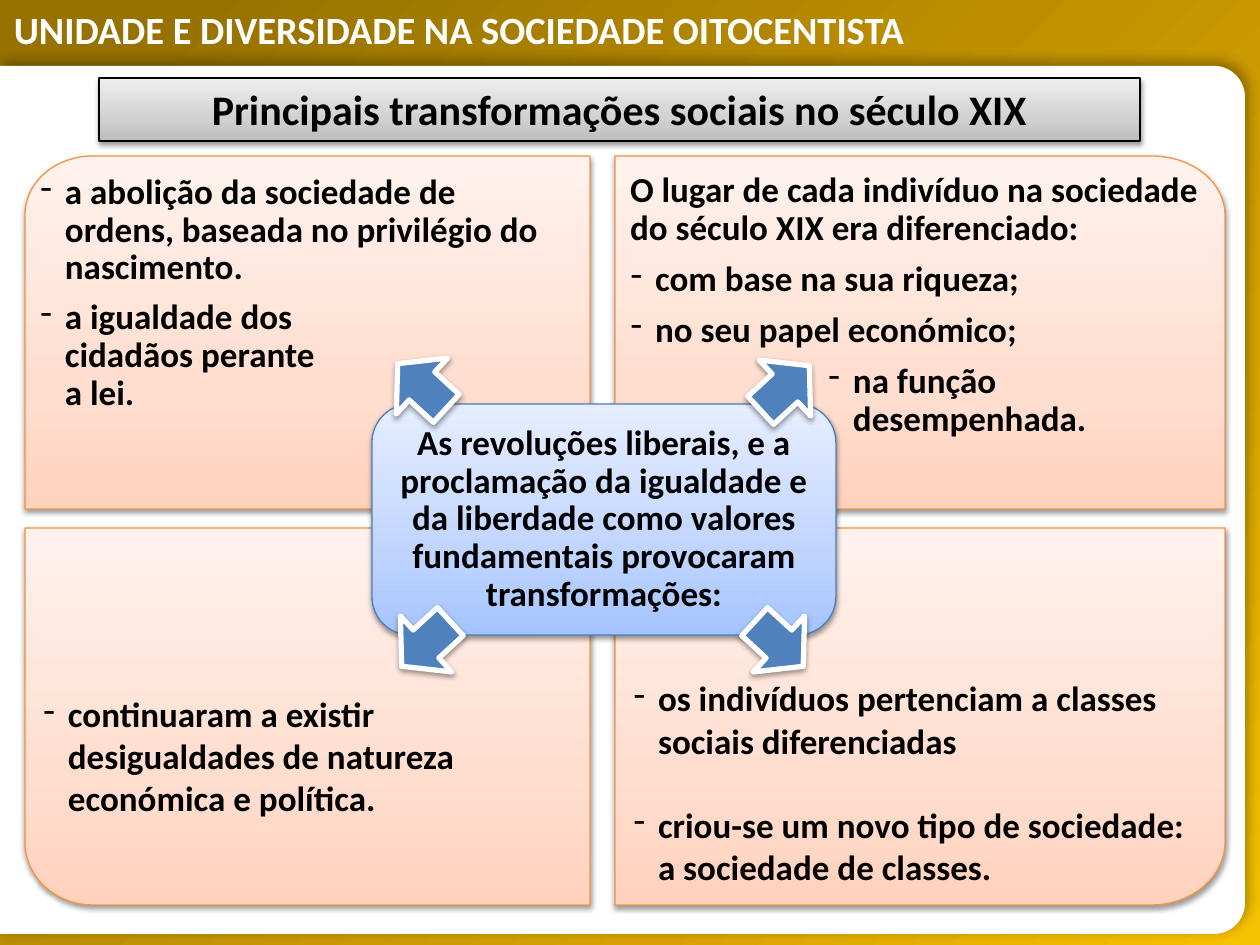
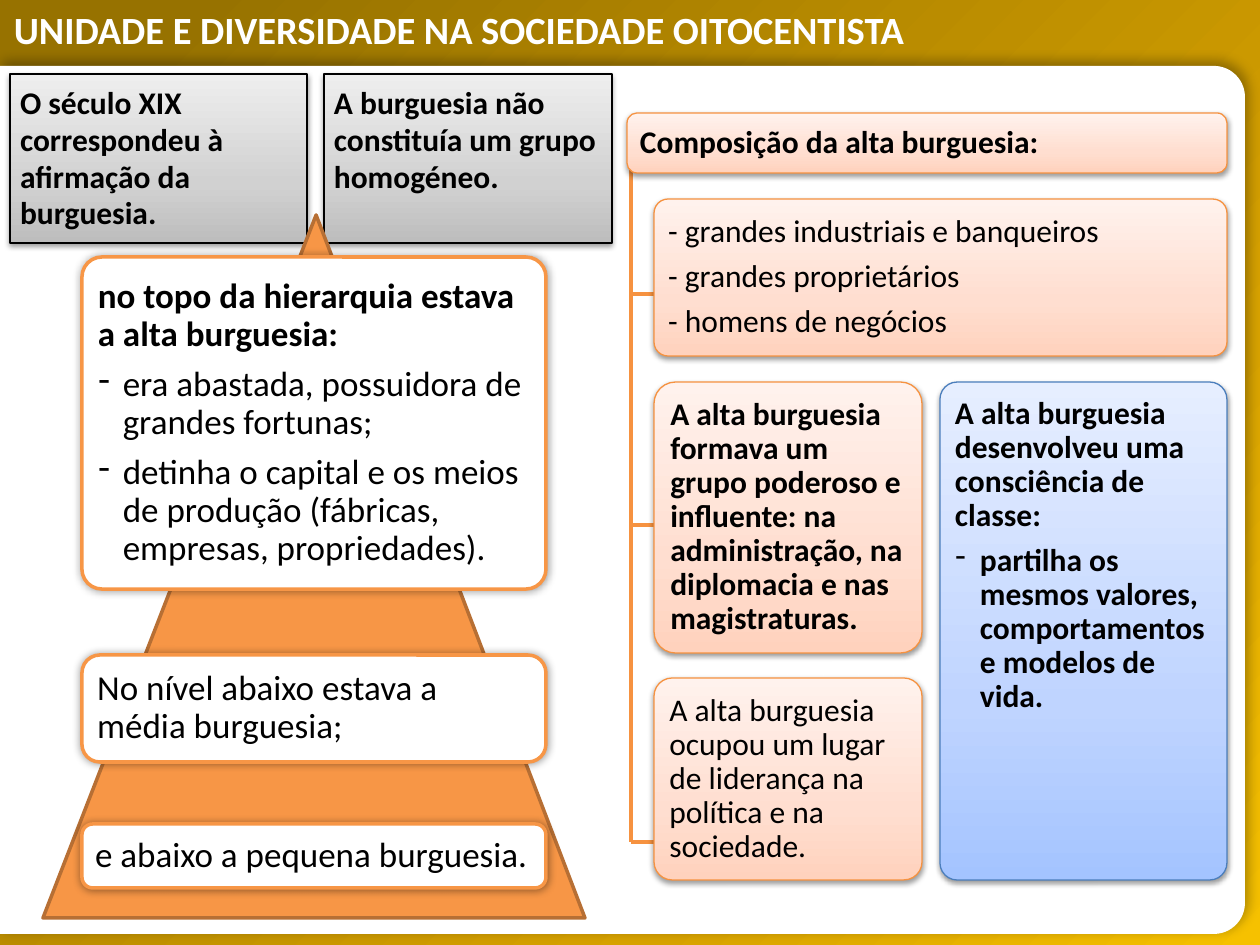
from dataclasses import dataclass
from math import cos, radians, sin

from lxml import etree
from pptx import Presentation
from pptx.dml.color import RGBColor
from pptx.enum.shapes import MSO_CONNECTOR, MSO_SHAPE
from pptx.enum.text import MSO_ANCHOR, PP_ALIGN
from pptx.oxml.ns import qn
from pptx.util import Pt

EMU_PER_PX = 914400 / 126
WIDTH, HEIGHT = 1260, 945
FONT = "Calibri"
HEADING = "UNIDADE E DIVERSIDADE NA SOCIEDADE OITOCENTISTA"

RECTANGLE = MSO_SHAPE.RECTANGLE
ROUNDED = MSO_SHAPE.ROUNDED_RECTANGLE
TRIANGLE = MSO_SHAPE.ISOSCELES_TRIANGLE
DOWN_ARROW = MSO_SHAPE.DOWN_ARROW
STRAIGHT = MSO_CONNECTOR.STRAIGHT
LEFT, CENTER = PP_ALIGN.LEFT, PP_ALIGN.CENTER
TOP, MIDDLE, BOTTOM = MSO_ANCHOR.TOP, MSO_ANCHOR.MIDDLE, MSO_ANCHOR.BOTTOM

BLACK, WHITE, ORANGE = "000000", "FFFFFF", "F79646"
ORANGE_LINE = "F69240"


@dataclass(frozen=True)
class Box:
    left: int
    top: int
    width: int
    height: int


@dataclass(frozen=True)
class Shadow:
    opacity: int
    blur: float
    distance: float
    direction: int


@dataclass(frozen=True)
class Look:
    """Fill is one colour or (position, colour) stops running at an angle."""
    fill: str | tuple
    line: str | None = None
    line_width: float = 0.75
    shadow: Shadow | None = None
    angle: int = 90


@dataclass(frozen=True)
class Line:
    text: str
    bold: bool = True
    bullet: bool = False
    indent: int = 25
    space_after: float | None = None


@dataclass(frozen=True)
class Panel:
    box: Box
    corner: str
    lines: list
    insets: tuple
    spacing: float | Pt = 0.9
    anchor: MSO_ANCHOR = TOP


@dataclass(frozen=True)
class Card:
    box: Box
    look: Look
    lines: list
    rounding: float = 0.1667
    size: int = 18
    anchor: MSO_ANCHOR = MIDDLE


DROP = Shadow(38, 3.1, 1.6, 90)
GOLD = Look(((9, "977200"), (72, "D7A200"), (100, "F6C100")), angle=-45)
PAGE = Look(WHITE, shadow=Shadow(30, 7, 3, 315))
GREY = Look(((0, "BDBDBD"), (35, "D1D1D1"), (100, "EEEEEE")), BLACK, shadow=DROP)
PEACH = Look(((0, "FFD2BD"), (35, "FFDED0"), (100, "FFF2ED")), ORANGE_LINE, shadow=DROP)
BLUE = Look(((0, "A4C4FF"), (35, "BFD4FF"), (100, "E6EEFF")), "4B7EBC", shadow=DROP)
ARROW = Look("4F81BD", WHITE, 3, DROP)
PYRAMID = Look(ORANGE, "B76F34", 2)
TIER = Look(WHITE, ORANGE, 2, Shadow(40, 5, 0, 0))


def px(value: float) -> int:
    return round(value * EMU_PER_PX)


def color(value: str) -> RGBColor:
    return RGBColor.from_string(value)


def placed(box: Box) -> tuple:
    return px(box.left), px(box.top), px(box.width), px(box.height)


def add_node(parent, tag: str, **attributes):
    return etree.SubElement(parent, qn(tag), {k: str(v) for k, v in attributes.items()})


def apply_look(shape, look: Look) -> None:
    if isinstance(look.fill, str):
        shape.fill.solid()
        shape.fill.fore_color.rgb = color(look.fill)
    else:
        shape.fill.gradient()
        shape.fill.gradient_angle = look.angle % 360
        stops = shape.element.spPr.find(qn("a:gradFill")).find(qn("a:gsLst"))
        for stop in list(stops):
            stops.remove(stop)
        for position, value in look.fill:
            add_node(add_node(stops, "a:gs", pos=position * 1000), "a:srgbClr", val=value)
    if look.line:
        shape.line.color.rgb = color(look.line)
        shape.line.width = Pt(look.line_width)
    else:
        shape.line.fill.background()
    shape.shadow.inherit = False
    if look.shadow:
        shadow = look.shadow
        effects = shape.element.spPr.find(qn("a:effectLst"))
        outer = add_node(effects, "a:outerShdw", blurRad=Pt(shadow.blur), dist=Pt(shadow.distance),
                         dir=shadow.direction * 60000, algn="ctr", rotWithShape=0)
        add_node(add_node(outer, "a:srgbClr", val=BLACK), "a:alpha", val=shadow.opacity * 1000)


def write_text(shape, lines: list, *, size: int = 20, text_color: str = BLACK, align=LEFT,
               anchor=TOP, insets: tuple = (10, 10, 10, 10), spacing: float | Pt = 0.9) -> None:
    frame = shape.text_frame
    frame.word_wrap = True
    frame.vertical_anchor = anchor
    frame.margin_left, frame.margin_top, frame.margin_right, frame.margin_bottom = map(px, insets)
    for index, line in enumerate(lines):
        paragraph = frame.add_paragraph() if index else frame.paragraphs[0]
        paragraph.text = line.text
        paragraph.alignment = align
        paragraph.line_spacing = spacing
        after = 0.35 * size if line.space_after is None else line.space_after
        paragraph.space_after = Pt(after)
        for run in paragraph.runs:
            run.font.name = FONT
            run.font.size = Pt(size)
            run.font.bold = line.bold
            run.font.color.rgb = color(text_color)
        if line.bullet:
            properties = paragraph._p.get_or_add_pPr()
            properties.set("marL", str(px(line.indent)))
            properties.set("indent", str(px(-25)))
            add_node(properties, "a:buChar", char="‐")


def add_preset(slide, kind, box: Box, look: Look, adjustment: float | None = None):
    shape = slide.shapes.add_shape(kind, *placed(box))
    if adjustment is not None:
        shape.adjustments[0] = adjustment
    apply_look(shape, look)
    return shape


def add_rounded_outline(slide, box: Box, corners: str, radius_x: float, radius_y: float, look: Look):
    """Rectangle whose named corners (of "nw ne se sw") are elliptical."""
    points = []
    for index, corner in enumerate(("nw", "ne", "se", "sw")):
        right, lower = "e" in corner, "s" in corner
        x, y = box.left + right * box.width, box.top + lower * box.height
        if corner not in corners.split():
            points.append((px(x), px(y)))
            continue
        center_x = x - radius_x if right else x + radius_x
        center_y = y - radius_y if lower else y + radius_y
        for step in range(19):
            turn = radians(180 + 90 * index + 5 * step)
            points.append((px(center_x + radius_x * cos(turn)), px(center_y + radius_y * sin(turn))))
    builder = slide.shapes.build_freeform(*points[0])
    builder.add_line_segments(points[1:], close=True)
    shape = builder.convert_to_shape()
    apply_look(shape, look)
    return shape


def add_line(slide, start: tuple, end: tuple) -> None:
    connector = slide.shapes.add_connector(STRAIGHT, *map(px, start + end))
    connector.line.color.rgb = color(ORANGE_LINE)
    connector.line.width = Pt(2.25)
    add_node(connector.element.spPr, "a:effectLst")


def add_card(slide, card: Card) -> None:
    shape = add_preset(slide, ROUNDED, card.box, card.look, card.rounding)
    write_text(shape, card.lines, size=card.size, anchor=card.anchor)


def add_base_slide(presentation):
    """Slide with the gold frame, the heading and the white page."""
    slide = presentation.slides.add_slide(presentation.slide_layouts[6])
    slide.background.fill.solid()
    slide.background.fill.fore_color.rgb = color("996600")
    add_preset(slide, RECTANGLE, Box(0, 0, WIDTH, HEIGHT), GOLD)
    heading = slide.shapes.add_textbox(*placed(Box(1, 18, 1162, 42)))
    write_text(heading, [Line(HEADING, space_after=0)], size=22, text_color=WHITE,
               insets=(13, 6, 13, 6), spacing=Pt(16))
    add_rounded_outline(slide, Box(0, 66, 1245, 868), "ne se", 31, 31, PAGE)
    return slide


def build_transformations(presentation) -> None:
    slide = add_base_slide(presentation)
    panels = [
        Panel(Box(25, 156, 565, 353), "nw", [
            Line("a abolição da sociedade de ordens, baseada no privilégio do nascimento.", bullet=True),
            Line("a igualdade dos\ncidadãos perante\na lei.", bullet=True),
        ], (15, 18, 18, 117)),
        Panel(Box(25, 528, 565, 377), "sw", [
            Line("continuaram a existir desigualdades de natureza económica e política.",
                 bullet=True, space_after=0),
        ], (18, 117, 18, 86), 1.0, BOTTOM),
        Panel(Box(615, 528, 610, 377), "se", [
            Line("os indivíduos pertenciam a classes sociais diferenciadas", bullet=True, space_after=24),
            Line("criou-se um novo tipo de sociedade: a sociedade de classes.", bullet=True, space_after=0),
        ], (18, 149, 18, 18), 1.0),
        Panel(Box(615, 156, 610, 353), "ne", [
            Line("O lugar de cada indivíduo na sociedade do século XIX era diferenciado:"),
            Line("com base na sua riqueza;", bullet=True),
            Line("no seu papel económico;", bullet=True),
            Line("na função desempenhada.", bullet=True, indent=223),
        ], (15, 15, 18, 118), Pt(22)),
    ]
    for panel in panels:
        box = panel.box
        shape = add_rounded_outline(slide, box, panel.corner, box.width * 0.12, box.height / 6, PEACH)
        write_text(shape, panel.lines, anchor=panel.anchor, insets=panel.insets, spacing=panel.spacing)

    cause = add_preset(slide, ROUNDED, Box(372, 404, 464, 231), BLUE)
    write_text(cause, [Line("As revoluções liberais, e a proclamação da igualdade e da liberdade "
                            "como valores fundamentais provocaram transformações:")],
               align=CENTER, anchor=MIDDLE, insets=(9, 9, 9, 9))
    title = add_preset(slide, RECTANGLE, Box(99, 78, 1041, 63), GREY)
    write_text(title, [Line("Principais transformações sociais no século XIX", space_after=0)],
               size=24, align=CENTER, insets=(13, 6, 13, 6), spacing=1.0)
    for left, top, rotation in ((388, 611, 47.4), (741, 611, 312.6), (384, 353, 132.6), (747, 355, 227.4)):
        arrow = add_preset(slide, DOWN_ARROW, Box(left, top, 76, 66), ARROW)
        arrow.rotation = rotation


def build_bourgeoisie(presentation) -> None:
    slide = add_base_slide(presentation)
    for box, text in (
        (Box(10, 74, 297, 169), "O século XIX correspondeu à afirmação da burguesia."),
        (Box(324, 74, 288, 169), "A burguesia não constituía um grupo homogéneo."),
    ):
        shape = add_preset(slide, RECTANGLE, box, GREY)
        write_text(shape, [Line(text, space_after=0)], size=18, spacing=Pt(21))

    add_preset(slide, TRIANGLE, Box(43, 215, 542, 703), PYRAMID, 0.504)
    trunk, branch_ends = 631, (294, 525, 842)
    add_line(slide, (trunk, 170), (trunk, branch_ends[-1]))
    for y in branch_ends:
        add_line(slide, (trunk, y), (656, y))

    cards = [
        Card(Box(82, 257, 464, 332), TIER, [
            Line("no topo da hierarquia estava a alta burguesia:"),
            Line("era abastada, possuidora de grandes fortunas;", False, True),
            Line("detinha o capital e os meios de produção (fábricas, empresas, propriedades).", False, True),
        ], 0.06, 20),
        Card(Box(82, 655, 464, 107), TIER, [Line("No nível abaixo estava a média burguesia;", False)], size=20),
        Card(Box(82, 824, 464, 64), TIER, [Line("e abaixo a pequena burguesia.", False)], size=20),
        Card(Box(654, 199, 573, 157), PEACH, [
            Line("- grandes industriais e banqueiros", False),
            Line("- grandes proprietários", False),
            Line("- homens de negócios", False),
        ], 0.09),
        Card(Box(654, 382, 268, 271), PEACH, [
            Line("A alta burguesia formava um grupo poderoso e influente: na administração, "
                 "na diplomacia e nas magistraturas."),
        ], 0.08),
        Card(Box(654, 678, 268, 202), PEACH, [
            Line("A alta burguesia ocupou um lugar de liderança na política e na sociedade.", False),
        ], 0.09),
        Card(Box(940, 382, 287, 498), BLUE, [
            Line("A alta burguesia desenvolveu uma consciência de classe:"),
            Line("partilha os mesmos valores, comportamentos e modelos de vida.", bullet=True),
        ], 0.06, anchor=TOP),
        Card(Box(627, 113, 600, 60), PEACH, [Line("Composição da alta burguesia:")]),
    ]
    for card in cards:
        add_card(slide, card)


def main() -> None:
    presentation = Presentation()
    presentation.slide_width, presentation.slide_height = px(WIDTH), px(HEIGHT)
    build_transformations(presentation)
    build_bourgeoisie(presentation)
    presentation.save("out.pptx")


if __name__ == "__main__":
    main()
